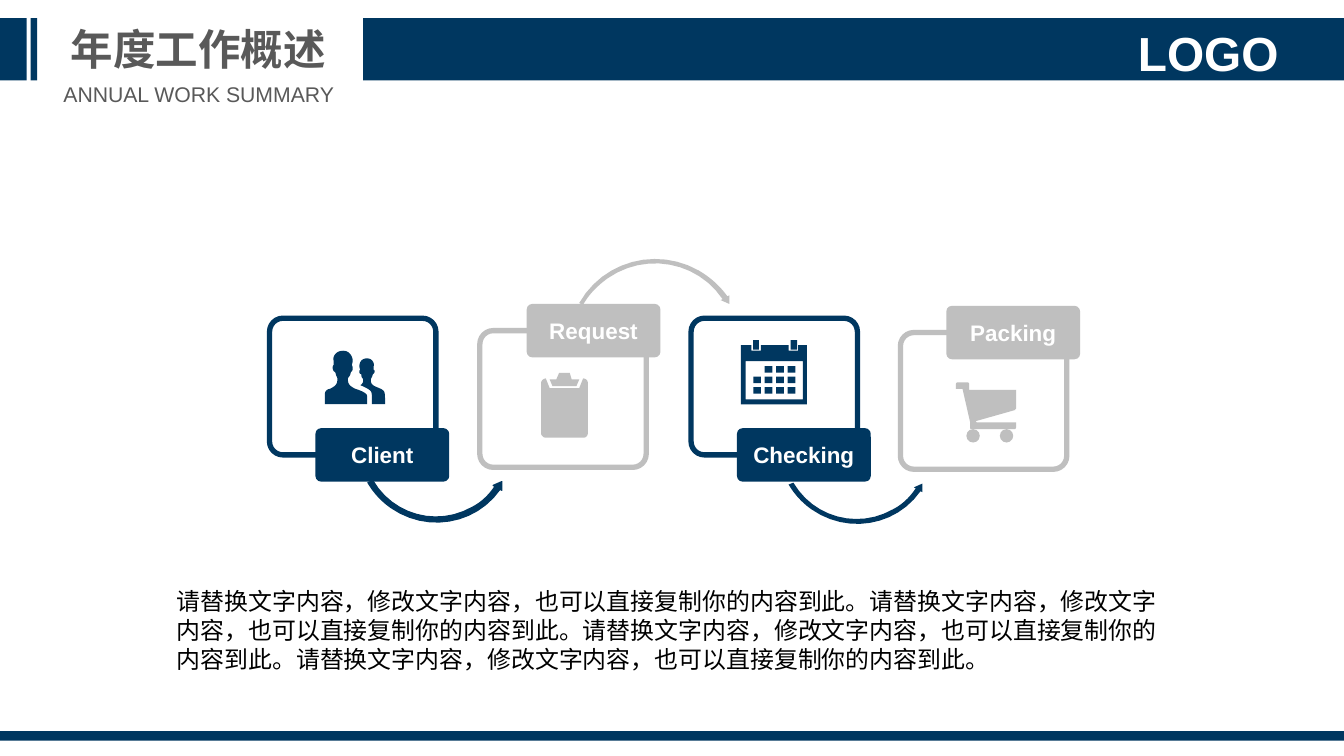
from dataclasses import dataclass

from pptx import Presentation
from pptx.dml.color import RGBColor
from pptx.enum.shapes import MSO_SHAPE
from pptx.enum.text import MSO_ANCHOR, PP_ALIGN
from pptx.util import Pt

PX = 9144  # EMU per px, 100 px to the inch
RECT, ROUND, OVAL = MSO_SHAPE.RECTANGLE, MSO_SHAPE.ROUNDED_RECTANGLE, MSO_SHAPE.OVAL
CENTER, LEFT, MIDDLE = PP_ALIGN.CENTER, PP_ALIGN.LEFT, MSO_ANCHOR.MIDDLE
NAVY, SILVER, SLATE, WHITE, BLACK = "003760", "BFBFBF", "595959", "FFFFFF", "000000"
FONT = "Arial"
CURVE_STEPS = 12

# A contour is a list of (x, y) corners and (x1, y1, x2, y2, x, y) Bézier curves.
Contour = list[tuple[int, ...]]


@dataclass
class Step:
    label: str
    color: str
    card: tuple[int, int]
    tag: tuple[int, int]


@dataclass
class Label:
    text: str
    box: tuple[int, int, int, int]
    size: int
    color: str
    bold: bool = False
    align: PP_ALIGN = CENTER
    wrap: bool = False
    inset: bool = True


STEPS = [
    Step("Client", NAVY, (282, 333), (330, 448)),
    Step("Request", SILVER, (502, 346), (551, 318)),
    Step("Checking", NAVY, (723, 333), (771, 448)),
    Step("Packing", SILVER, (942, 348), (990, 320)),
]
CARD_SIZE, CARD_RADIUS = (174, 143), 14
TAG_SIZE, TAG_RADIUS = (140, 56), 6

BANDS = [(380, 19, 1026, 65), (0, 19, 28, 65), (32, 19, 7, 65), (0, 765, 1406, 10)]
SENTENCE = "请替换文字内容，修改文字内容，也可以直接复制你的内容到此。"
LABELS = [
    Label(SENTENCE * 4, (175, 609, 1055, 131), 18, BLACK, align=LEFT, wrap=True),
    Label("年度工作概述", (63, 19, 289, 64), 32, SLATE, bold=True),
    Label("LOGO", (1160, 25, 208, 61), 36, WHITE, bold=True, wrap=True, inset=False),
    Label("ANNUAL WORK SUMMARY", (55, 80, 306, 37), 16, SLATE),
]

PEOPLE: list[Contour] = [
    [(372, 407), (366, 404, 364, 402, 364, 397), (364, 394, 366, 395, 367, 390),
     (367, 388, 369, 390, 369, 385), (369, 383, 368, 382, 368, 382),
     (368, 382, 369, 380, 369, 377), (369, 375, 367, 367, 359, 367),
     (350, 367, 348, 375, 349, 377), (349, 380, 349, 382, 349, 382),
     (349, 382, 348, 383, 348, 385), (349, 390, 350, 388, 351, 390),
     (352, 395, 353, 394, 353, 397), (353, 402, 351, 404, 345, 407),
     (343, 407, 340, 409, 340, 412), (340, 423), (384, 423),
     (384, 423, 384, 416, 384, 414), (384, 412, 379, 409, 372, 407)],
    [(403, 423), (403, 423, 403, 411, 402, 410), (401, 408, 399, 407, 394, 405),
     (389, 403, 388, 401, 388, 398), (388, 395, 389, 396, 390, 392),
     (390, 391, 391, 392, 392, 389), (392, 387, 391, 387, 391, 387),
     (391, 387, 391, 385, 391, 383), (392, 381, 390, 375, 384, 375),
     (377, 375, 376, 381, 376, 383), (376, 385, 377, 387, 377, 387),
     (377, 387, 376, 387, 376, 389), (376, 392, 378, 391, 378, 392),
     (378, 396, 380, 395, 380, 398), (380, 400, 379, 402, 377, 403),
     (388, 408, 389, 409, 389, 414), (389, 423)],
]
CLIPBOARD: list[Contour] = [
    [(610, 396), (606, 406), (575, 406), (571, 396), (569, 396, 566, 398, 566, 401),
     (566, 453), (566, 456, 569, 458, 571, 458), (610, 458),
     (613, 458, 615, 456, 615, 453), (615, 401), (615, 398, 613, 396, 610, 396)],
    [(603, 404), (606, 397), (598, 397), (596, 390), (585, 390), (582, 397),
     (575, 397), (578, 404)],
]
CALENDAR: list[Contour] = [
    [(844, 361), (835, 361), (835, 367), (825, 367), (825, 361), (796, 361),
     (796, 367), (786, 367), (786, 361), (775, 361), (775, 423), (844, 423)],
    [(840, 418), (780, 418), (780, 378), (840, 378)],
]
CALENDAR_PINS = [(788, 356, 6, 10), (827, 356, 7, 10)]
CALENDAR_DAYS = [(788 + 12 * col, 383 + 11 * row, 8, 7)
                 for row in range(3) for col in range(4) if row or col]
CART: list[Contour] = [
    [(1023, 440), (1062, 429), (1062, 428, 1063, 428, 1063, 427), (1063, 408),
     (1014, 408), (1014, 402), (1014, 401, 1013, 400, 1012, 400), (1002, 400),
     (1001, 400, 1000, 401, 1000, 402), (1000, 407), (1007, 407), (1015, 442),
     (1015, 447), (1015, 448, 1015, 449, 1016, 449), (1062, 449),
     (1062, 449, 1063, 448, 1063, 447), (1063, 442), (1024, 442),
     (1020, 442, 1020, 441, 1023, 440)],
]
CART_WHEELS = [(1011, 449, 14, 14), (1046, 449, 14, 14)]

ARROW_UNDER: Contour = [
    (385, 505), (390, 503), (411, 539, 457, 552, 494, 531), (504, 526, 512, 518, 518, 509),
    (516, 508), (525, 504), (525, 513), (523, 512),
    (497, 549, 446, 557, 409, 531), (399, 524, 391, 515, 385, 505)]
ARROW_OVER: Contour = [
    (606, 317), (631, 273, 687, 258, 731, 283), (743, 290, 753, 299, 761, 310),
    (763, 309), (763, 318), (754, 314), (756, 313),
    (729, 273, 675, 264, 636, 291), (625, 299, 616, 308, 610, 319)]
SECOND_ARROW_SHIFT = (440, 2)


def rgb(color: str) -> RGBColor:
    return RGBColor.from_string(color)


def paint(s, fill: str | None, line: str | None = None, width: float = 0) -> None:
    s.shadow.inherit = False
    if fill:
        s.fill.solid()
        s.fill.fore_color.rgb = rgb(fill)
    else:
        s.fill.background()
    if line:
        s.line.color.rgb = rgb(line)
        s.line.width = Pt(width)
    else:
        s.line.fill.background()


def add_preset(shapes, kind, box: tuple[int, ...], fill: str | None, line: str | None = None,
               width: float = 0, radius: int = 0):
    s = shapes.add_shape(kind, *(v * PX for v in box))
    if radius:
        s.adjustments[0] = radius / min(box[2:])
    paint(s, fill, line, width)
    return s


def flatten(contour: Contour, dx: int, dy: int) -> list[tuple[float, float]]:
    """Turn corners and curves into EMU points, moved by dx and dy px."""
    points = [contour[0]]
    for node in contour[1:]:
        if len(node) == 2:
            points.append(node)
            continue
        controls = [points[-1], node[:2], node[2:4], node[4:]]
        for i in range(1, CURVE_STEPS + 1):
            t = i / CURVE_STEPS
            weights = ((1 - t) ** 3, 3 * t * (1 - t) ** 2, 3 * t * t * (1 - t), t ** 3)
            points.append(tuple(sum(w * c[axis] for w, c in zip(weights, controls))
                                for axis in (0, 1)))
    return [((x + dx) * PX, (y + dy) * PX) for x, y in points]


def add_outline(shapes, contours: list[Contour], fill: str, shift: tuple[int, int] = (0, 0),
                line: str | None = None) -> None:
    outlines = [flatten(contour, *shift) for contour in contours]
    builder = shapes.build_freeform(*outlines[0][0])
    for i, points in enumerate(outlines):
        if i:
            builder.move_to(*points[0])
        builder.add_line_segments(points[1:], close=True)
    paint(builder.convert_to_shape(), fill, line, 1)


def style_text(tf, size: float, color: str, bold: bool, align: PP_ALIGN) -> None:
    p = tf.paragraphs[0]
    p.alignment = align
    font = p.runs[0].font
    font.name, font.size, font.bold = FONT, Pt(size), bold
    font.color.rgb = rgb(color)


def add_tag(shapes, step: Step) -> None:
    s = add_preset(shapes, ROUND, step.tag + TAG_SIZE, step.color, radius=TAG_RADIUS)
    tf = s.text_frame
    tf.text = step.label
    tf.vertical_anchor = MIDDLE
    style_text(tf, 16.9, WHITE, True, CENTER)


def add_label(shapes, label: Label) -> None:
    tf = shapes.add_textbox(*(v * PX for v in label.box)).text_frame
    tf.text = label.text
    tf.word_wrap = label.wrap
    if not label.inset:
        tf.margin_left = tf.margin_top = tf.margin_right = tf.margin_bottom = 0
    style_text(tf, label.size, label.color, label.bold, label.align)


def main() -> None:
    prs = Presentation()
    prs.slide_width, prs.slide_height = 1406 * PX, 791 * PX
    shapes = prs.slides.add_slide(prs.slide_layouts[6]).shapes

    for step in STEPS:
        add_preset(shapes, ROUND, step.card + CARD_SIZE, None, step.color, 4, CARD_RADIUS)
    for icon, step in zip((PEOPLE, CLIPBOARD, CALENDAR, CART), STEPS):
        add_outline(shapes, icon, step.color)
    for box in CALENDAR_PINS + CALENDAR_DAYS:
        add_preset(shapes, RECT, box, NAVY)
    for box in CART_WHEELS:
        add_preset(shapes, OVAL, box, SILVER)

    add_outline(shapes, [ARROW_UNDER], NAVY, line=NAVY)
    add_outline(shapes, [ARROW_OVER], SILVER)
    add_outline(shapes, [ARROW_UNDER], NAVY, SECOND_ARROW_SHIFT)
    for step in STEPS:
        add_tag(shapes, step)

    for band in BANDS:
        add_preset(shapes, RECT, band, NAVY)
    for label in LABELS:
        add_label(shapes, label)
    prs.save("out.pptx")


if __name__ == "__main__":
    main()
